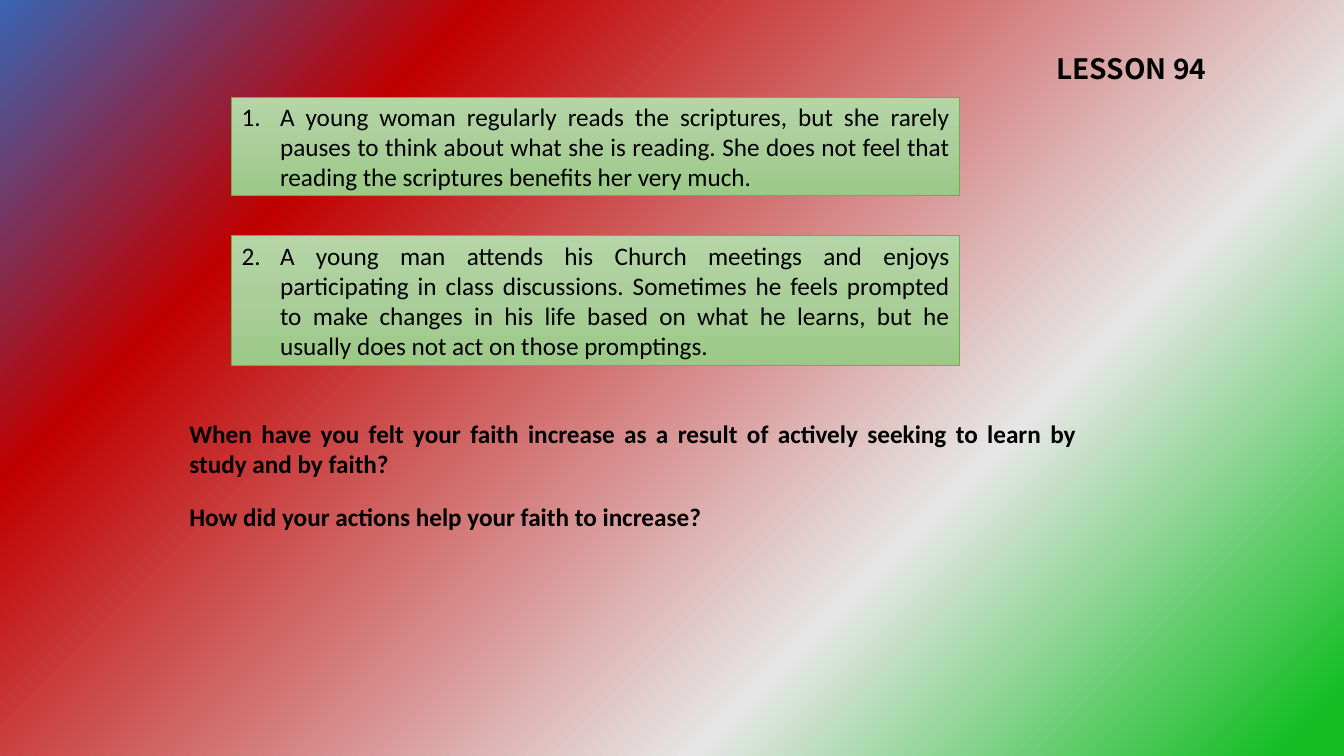
"""Build the Lesson 94 slide with two scenarios and two questions."""
import pptx
import pptx.dml.color
import pptx.enum.shapes
import pptx.enum.text
import pptx.oxml.ns
import pptx.util
from lxml import etree

RGBColor = pptx.dml.color.RGBColor
BLACK = RGBColor(0x00, 0x00, 0x00)
LEAF = RGBColor(0x70, 0xAD, 0x47)
BACKDROP = [
    (0, RGBColor(0x38, 0x64, 0xB3)),
    (23, RGBColor(0xC0, 0x00, 0x00)),
    (69, RGBColor(0xE6, 0xE6, 0xE6)),
    (97, RGBColor(0x13, 0xBD, 0x23)),
]
CARD = [
    (0, RGBColor(0xB5, 0xD5, 0xA7)),
    (50, RGBColor(0xAA, 0xCE, 0x9A)),
    (100, RGBColor(0x9C, 0xC9, 0x87)),
]
JUSTIFY = pptx.enum.text.PP_ALIGN.JUSTIFY
INDENT = pptx.util.Inches(0.38)
SCENARIOS = [
    (12.93, 12.93, "A young woman regularly reads the scriptures, but she rarely pauses to think "
     "about what she is reading. She does not feel that reading the scriptures benefits her very much."),
    (31.2, 17.07, "A young man attends his Church meetings and enjoys participating in class "
     "discussions. Sometimes he feels prompted to make changes in his life based on what he learns, "
     "but he usually does not act on those promptings."),
]


def write(frame, text, size=18, font="Calibri", bold=False, align=None, before=0, number=None):
    para = frame.paragraphs[0]
    para.alignment = align
    para.space_before = pptx.util.Pt(before)
    span = para.add_run()
    span.text = text
    span.font.size = pptx.util.Pt(size)
    span.font.name = font
    span.font.bold = bold
    span.font.color.rgb = BLACK
    if number:
        properties = para._p.get_or_add_pPr()
        properties.set("marL", str(INDENT))
        properties.set("indent", str(-INDENT))
        etree.SubElement(properties, pptx.oxml.ns.qn("a:buAutoNum"),
                         type="arabicPeriod", startAt=str(number))


def paint(fill, element, stops, angle):
    fill.gradient()
    fill.gradient_angle = 360 - angle
    stop_list = element.xpath(".//a:gsLst")[0]
    stop_list.clear()
    for position, color in stops:
        stop = etree.SubElement(stop_list, pptx.oxml.ns.qn("a:gs"), pos=str(position * 1000))
        etree.SubElement(stop, pptx.oxml.ns.qn("a:srgbClr"), val=str(color))


class Page:
    """Hold the current slide and place elements by percent of its size."""

    def __init__(self, deck):
        self.deck = deck
        self.slide = deck.slides.add_slide(deck.slide_layouts[6])
        paint(self.slide.background.fill, self.slide.element, BACKDROP, 45)

    def area(self, left, top, width, height):
        across, down = self.deck.slide_width / 100, self.deck.slide_height / 100
        return [round(length) for length in (left * across, top * down, width * across, height * down)]

    def label(self, place, text, wrap=True, **style):
        box = self.slide.shapes.add_textbox(*self.area(*place))
        box.text_frame.word_wrap = wrap
        write(box.text_frame, text, **style)

    def card(self, place, text, **style):
        box = self.slide.shapes.add_shape(
            pptx.enum.shapes.MSO_SHAPE.RECTANGLE, *self.area(*place))
        box.shadow.inherit = False
        paint(box.fill, box.element, CARD, 90)
        box.line.color.rgb = LEAF
        box.line.width = pptx.util.Pt(0.5)
        box.text_frame.word_wrap = True
        box.text_frame.vertical_anchor = pptx.enum.text.MSO_ANCHOR.MIDDLE
        write(box.text_frame, text, **style)


deck = pptx.Presentation()
deck.slide_width = pptx.util.Inches(13.33)
deck.slide_height = pptx.util.Inches(7.5)
page = Page(deck)
page.label((77.87, 6.13, 12.83, 6.8), "LESSON 94",
           size=20, font="Noto Sans CJK JP", bold=True, before=10)
for number, (top, height, text) in enumerate(SCENARIOS, 1):
    page.card((17.25, top, 54.16, height), text, align=JUSTIFY, number=number)
page.label((13.35, 54.67, 67.52, 9.47),
           "When have you felt your faith increase as a result of actively seeking to learn "
           "by study and by faith?", bold=True, align=JUSTIFY)
page.label((13.35, 65.6, 39.91, 5.33),
           "How did your actions help your faith to increase?", wrap=False, bold=True)
deck.save("out.pptx")
